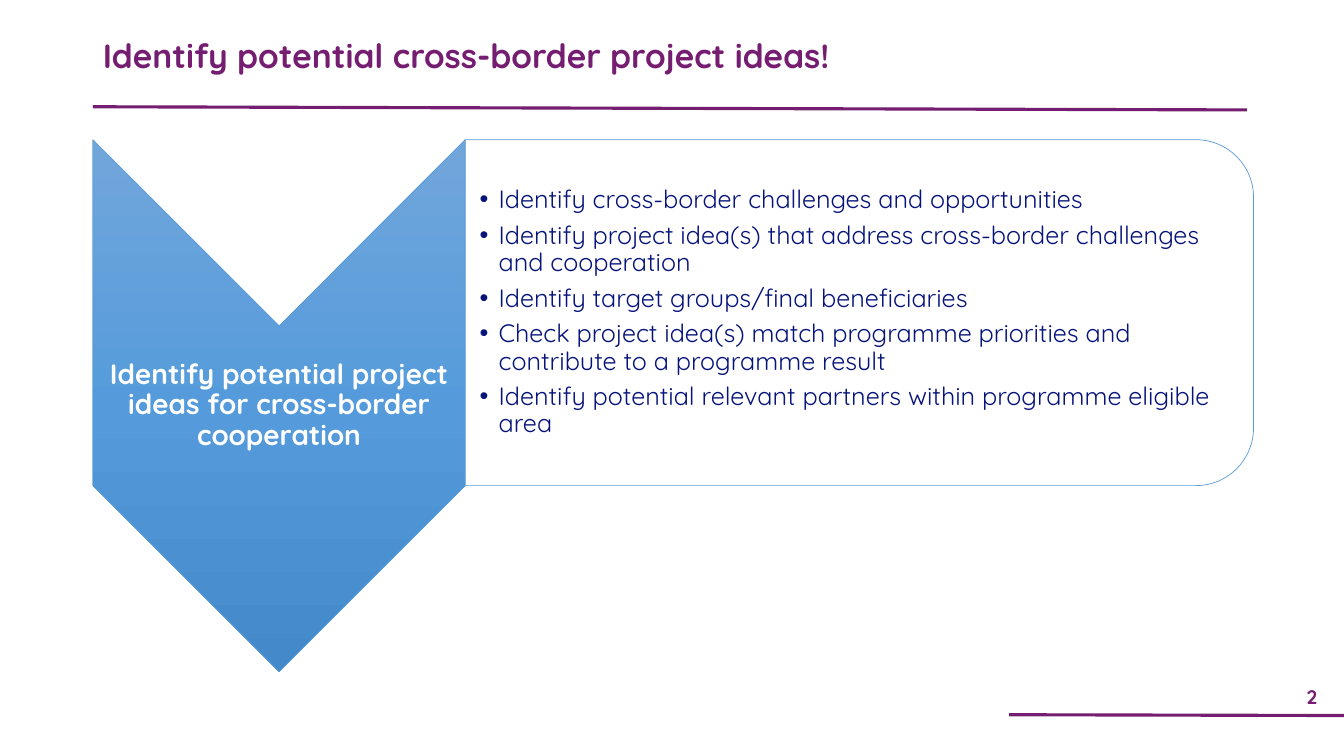
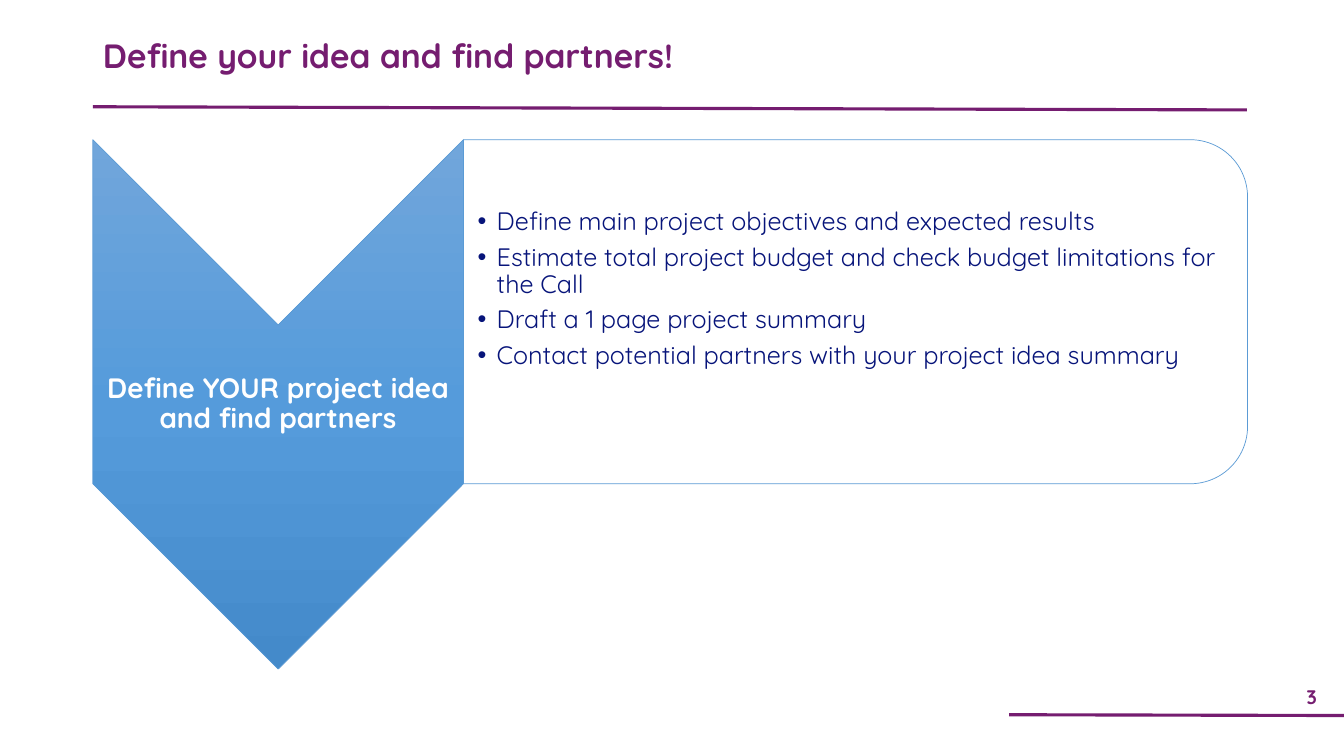
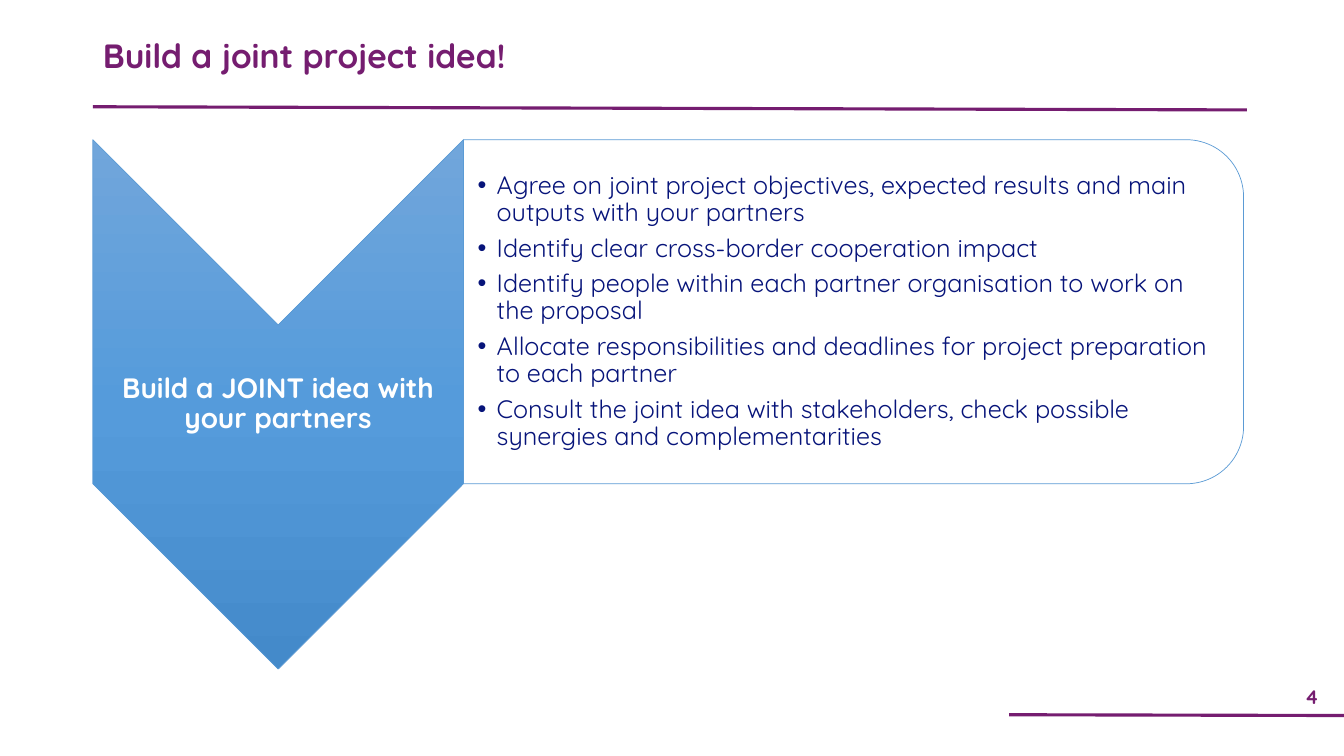
from copy import deepcopy

from pptx import Presentation
from pptx import util as u
from pptx.dml.color import RGBColor
from pptx.enum import shapes, text
from pptx.oxml.xmlchemy import OxmlElement

PURPLE = RGBColor(0x75, 0x1D, 0x70)
NAVY = RGBColor(0x07, 0x14, 0x7A)
WHITE = RGBColor(0xFF, 0xFF, 0xFF)
EDGE_BLUE = RGBColor(0x5B, 0x9B, 0xD5)
CHEVRON_BLUES = [RGBColor(0x71, 0xA6, 0xDB), RGBColor(0x55, 0x9B, 0xDB),
                 RGBColor(0x44, 0x8A, 0xCA)]
FONT = "Quicksand"

PAGE_WIDTH, PAGE_HEIGHT = 33.87, 19.05
CONTENT_LEFT, CONTENT_TOP = 2.34, 3.52
FIRST_NUMBER = 2

# Lengths in cm: chevron length, width of chevron and panel, list bottom margin
STEPS = [
    dict(title="Identify potential cross-border project ideas!",
         label="Identify potential project ideas for cross-border cooperation",
         tasks=["Identify cross-border challenges and opportunities",
                "Identify project idea(s) that address cross-border challenges and cooperation",
                "Identify target groups/final beneficiaries",
                "Check project idea(s) match programme priorities and contribute to a programme result",
                "Identify potential relevant partners within programme eligible area"],
         length=13.41, width=29.25, bottom=0.03),
    dict(title="Define your idea and find partners!",
         label="Define YOUR project idea and find partners",
         tasks=["Define main project objectives and expected results",
                "Estimate total project budget and check budget limitations for the Call",
                "Draft a 1 page project summary",
                "Contact potential partners with your project idea summary"],
         length=13.34, width=29.1, bottom=1.16),
    dict(title="Build a joint project idea!",
         label="Build a JOINT idea with your partners",
         tasks=["Agree on joint project objectives, expected results and main outputs with your partners",
                "Identify clear cross-border cooperation impact",
                "Identify people within each partner organisation to work on the proposal",
                "Allocate responsibilities and deadlines for project preparation to each partner",
                "Consult the joint idea with stakeholders, check possible synergies and complementarities"],
         length=13.34, width=29, bottom=0.03),
]


def place(box, left, top, width, height):
    box.left, box.top = u.Cm(left), u.Cm(top)
    box.width, box.height = u.Cm(width), u.Cm(height)


def add_bullet(para, indent):
    props = para._p.get_or_add_pPr()
    props.set("marL", str(u.Cm(indent)))
    props.set("indent", str(-u.Cm(indent)))
    bullet = OxmlElement("a:buChar")
    bullet.set("char", "•")
    props.append(bullet)


def write(box, lines, size, color, bold=False, align=text.PP_ALIGN.LEFT,
          anchor=text.MSO_ANCHOR.MIDDLE, margins=(0.25, 0.13, 0.25, 0.13),
          spacing=0.9, after=0, bullet_indent=None):
    """Fill a box with one paragraph per line; margins run left, top, right, bottom."""
    frame = box.text_frame
    frame.word_wrap = True
    frame.auto_size = text.MSO_AUTO_SIZE.NONE
    frame.vertical_anchor = anchor
    (frame.margin_left, frame.margin_top,
     frame.margin_right, frame.margin_bottom) = map(u.Cm, margins)
    for index, line in enumerate(lines):
        para = frame.add_paragraph() if index else frame.paragraphs[0]
        if bullet_indent:
            add_bullet(para, bullet_indent)
        para.alignment = align
        para.line_spacing = spacing
        para.space_before, para.space_after = u.Pt(0), u.Pt(after)
        span = para.add_run()
        span.text = line
        span.font.name, span.font.size = FONT, u.Pt(size)
        span.font.bold, span.font.color.rgb = bold, color


def add_rule(page, start_x, start_y, end_x, end_y):
    rule = page.shapes.add_connector(
        shapes.MSO_CONNECTOR.STRAIGHT, *map(u.Cm, (start_x, start_y, end_x, end_y)))
    rule.line.color.rgb, rule.line.width = PURPLE, u.Pt(2.25)
    rule._element.spPr.append(OxmlElement("a:effectLst"))


def add_turned_shape(page, kind, left, top, width, height):
    """Add a preset turned a quarter clockwise that covers the given box."""
    shift = (width - height) / 2
    shape = page.shapes.add_shape(
        kind, *map(u.Cm, (left + shift, top - shift, height, width)))
    shape.rotation = 90
    shape.shadow.inherit = False
    shape.line.color.rgb, shape.line.width = EDGE_BLUE, u.Pt(0.5)
    return shape


def fill_gradient(shape, colors):
    shape.fill.gradient()
    shape.fill.gradient_angle = 0
    first = shape.fill.gradient_stops[0]._gs
    first.addnext(deepcopy(first))
    for index, (stop, color) in enumerate(zip(shape.fill.gradient_stops, colors)):
        stop.color.rgb = color
        stop.position = index / (len(colors) - 1)


def add_frame(page, title, number):
    """Title, rules and page number that every slide shares."""
    add_rule(page, CONTENT_LEFT, 2.69, 31.42, 2.77)
    add_rule(page, 25.43, 18.01, PAGE_WIDTH, 18.03)
    number_box = page.shapes.add_textbox(0, 0, 0, 0)
    place(number_box, 32.26, 17.09, 1.6, 0.91)
    write(number_box, [str(number)], size=14, color=PURPLE, bold=True,
          align=text.PP_ALIGN.CENTER, spacing=1.0)
    place(page.shapes.title, CONTENT_LEFT, 0.86, 24.71, 1.65)
    write(page.shapes.title, [title], size=24, color=PURPLE, bold=True,
          align=text.PP_ALIGN.JUSTIFY, anchor=text.MSO_ANCHOR.TOP)


def add_chevron(page, label, left, top, width, height):
    chevron = add_turned_shape(page, shapes.MSO_SHAPE.CHEVRON, left, top, width, height)
    fill_gradient(chevron, CHEVRON_BLUES)
    label_box = page.shapes.add_textbox(0, 0, 0, 0)
    place(label_box, left, top + width / 2, width, height - width)
    write(label_box, [label], size=20, color=WHITE, bold=True,
          align=text.PP_ALIGN.CENTER, margins=[0.03] * 4)


def add_task_panel(page, tasks, bottom, left, top, width, height):
    panel = add_turned_shape(page, shapes.MSO_SHAPE.ROUND_2_SAME_RECTANGLE,
                             left, top, width, height)
    panel.fill.solid()
    panel.fill.fore_color.rgb = WHITE
    task_list = page.placeholders[1]
    inset = 0.43
    place(task_list, left, top + inset, width - inset, height - 2 * inset)
    write(task_list, tasks, size=18, color=NAVY, after=6, bullet_indent=0.48,
          margins=(0.36, 0.03, 0.03, bottom))
    page.shapes.element.append(task_list.element)  # bring in front of the panel


def add_step(deck, number, title, label, tasks, length, width, bottom):
    page = deck.slides.add_slide(deck.slide_layouts[1])
    add_frame(page, title, number)
    chevron_width = 0.7 * length
    add_chevron(page, label, CONTENT_LEFT, CONTENT_TOP, chevron_width, length)
    add_task_panel(page, tasks, bottom, CONTENT_LEFT + chevron_width, CONTENT_TOP,
                   width - chevron_width, 0.65 * length)


def main():
    deck = Presentation()
    deck.slide_width, deck.slide_height = u.Cm(PAGE_WIDTH), u.Cm(PAGE_HEIGHT)
    for number, step in enumerate(STEPS, FIRST_NUMBER):
        add_step(deck, number, **step)
    deck.save("out.pptx")


if __name__ == "__main__":
    main()
